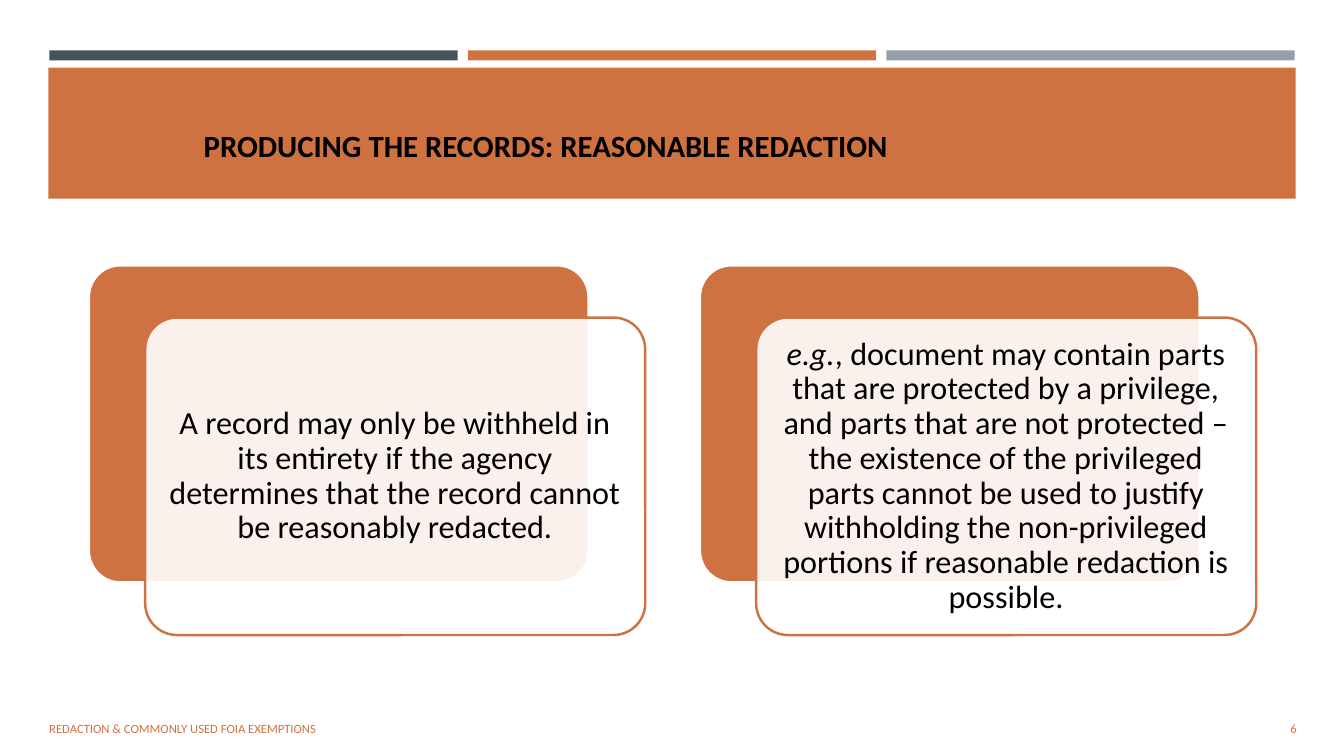
from dataclasses import dataclass

from lxml.etree import SubElement
from pptx import Presentation
from pptx.dml.color import RGBColor
from pptx.enum.shapes import MSO_SHAPE
from pptx.enum.text import MSO_ANCHOR, MSO_AUTO_SIZE, PP_ALIGN
from pptx.oxml.ns import qn
from pptx.shapes.autoshape import Shape
from pptx.slide import Slide
from pptx.util import Emu, Pt

PX = 9144  # 100 px to the inch
FONT = "Calibri"
ORANGE, SLATE, GREY = "CE7242", "465359", "969FA7"
BLACK, WHITE = "000000", "FFFFFF"


@dataclass(frozen=True)
class Box:
    left: int
    top: int
    width: int
    height: int

    def emu(self) -> tuple[Emu, ...]:
        return tuple(Emu(n * PX) for n in (self.left, self.top, self.width, self.height))

    def moved(self, right: int, down: int = 0) -> "Box":
        return Box(self.left + right, self.top + down, self.width, self.height)


@dataclass(frozen=True)
class Span:
    text: str
    italic: bool = False


@dataclass(frozen=True)
class Label:
    box: Box
    text: str
    align: PP_ALIGN


BAR = Box(49, 50, 405, 10)
BAR_STEP = 415
BAR_COLORS = (SLATE, ORANGE, GREY)
BAND = Box(48, 67, 1237, 130)
TITLE = Box(192, 87, 949, 115)
CARD = Box(88, 263, 496, 315)
CARD_STEP = 606
FRONT_OFFSET = (56, 52)

CARDS = (
    (Span("A record may only be withheld in its entirety if the agency "
          "determines that the record cannot be reasonably redacted."),),
    (Span("e.g.", italic=True),
     Span(", document may contain parts that are protected by a privilege, "
          "and parts that are not protected – the existence of the privileged "
          "parts cannot be used to justify withholding the non-privileged "
          "portions if reasonable redaction is possible.")),
)
FOOTERS = (
    Label(Box(39, 703, 746, 40), "REDACTION & COMMONLY USED FOIA EXEMPTIONS", PP_ALIGN.LEFT),
    Label(Box(1181, 703, 115, 40), "6", PP_ALIGN.RIGHT),
)


def color(value: str) -> RGBColor:
    return RGBColor.from_string(value)


def style_paragraph(para, size: int, value: str, align: PP_ALIGN, bold: bool = False) -> None:
    para.alignment = align
    para.font.name, para.font.size, para.font.bold = FONT, Pt(size), bold
    para.font.color.rgb = color(value)


def add_block(page: Slide, kind: MSO_SHAPE, box: Box, fill: str) -> Shape:
    shape = page.shapes.add_shape(kind, *box.emu())
    shape.shadow.inherit = False
    shape.fill.solid()
    shape.fill.fore_color.rgb = color(fill)
    shape.line.fill.background()
    return shape


def add_rounded(page: Slide, box: Box, fill: str, line: str, width: float) -> Shape:
    shape = add_block(page, MSO_SHAPE.ROUNDED_RECTANGLE, box, fill)
    shape.adjustments[0] = 0.1
    shape.line.color.rgb = color(line)
    shape.line.width = Pt(width)
    return shape


def set_fill_opacity(shape: Shape, percent: int) -> None:
    fill = shape.element.spPr.find(qn("a:solidFill"))
    SubElement(fill[0], qn("a:alpha"), val=str(percent * 1000))


def add_card(page: Slide, box: Box, spans: tuple[Span, ...]) -> None:
    add_rounded(page, box, ORANGE, WHITE, 2)
    front = add_rounded(page, box.moved(*FRONT_OFFSET), WHITE, ORANGE, 1.75)
    set_fill_opacity(front, 90)
    frame = front.text_frame
    frame.word_wrap = True
    frame.vertical_anchor = MSO_ANCHOR.MIDDLE
    frame.margin_left = frame.margin_right = Emu(10 * PX)
    frame.margin_top = frame.margin_bottom = Emu(10 * PX)
    para = frame.paragraphs[0]
    style_paragraph(para, 23, BLACK, PP_ALIGN.CENTER)
    para.line_spacing = 0.9
    for span in spans:
        run = para.add_run()
        run.text = span.text
        run.font.italic = span.italic


def place_title(page: Slide, text: str) -> None:
    """Format the title placeholder and bring it in front of the band."""
    title = page.shapes.title
    title.left, title.top, title.width, title.height = TITLE.emu()
    frame = title.text_frame
    frame.text = text
    frame.auto_size = MSO_AUTO_SIZE.NONE
    frame.vertical_anchor = MSO_ANCHOR.BOTTOM
    frame.margin_bottom = Emu(40 * PX)
    style_paragraph(frame.paragraphs[0], 22, BLACK, PP_ALIGN.LEFT, bold=True)
    title.element.getparent().append(title.element)


def add_label(page: Slide, label: Label) -> None:
    frame = page.shapes.add_textbox(*label.box.emu()).text_frame
    frame.word_wrap = True
    frame.vertical_anchor = MSO_ANCHOR.MIDDLE
    frame.text = label.text
    style_paragraph(frame.paragraphs[0], 9, ORANGE, label.align)


def main() -> None:
    deck = Presentation()
    deck.slide_width, deck.slide_height = Emu(1333 * PX), Emu(750 * PX)
    page = deck.slides.add_slide(deck.slide_layouts.get_by_name("Title Only"))
    for index, fill in enumerate(BAR_COLORS):
        add_block(page, MSO_SHAPE.RECTANGLE, BAR.moved(index * BAR_STEP), fill)
    add_block(page, MSO_SHAPE.RECTANGLE, BAND, ORANGE)
    place_title(page, "PRODUCING THE RECORDS: REASONABLE REDACTION")
    for index, spans in enumerate(CARDS):
        add_card(page, CARD.moved(index * CARD_STEP), spans)
    for label in FOOTERS:
        add_label(page, label)
    deck.save("out.pptx")


if __name__ == "__main__":
    main()
